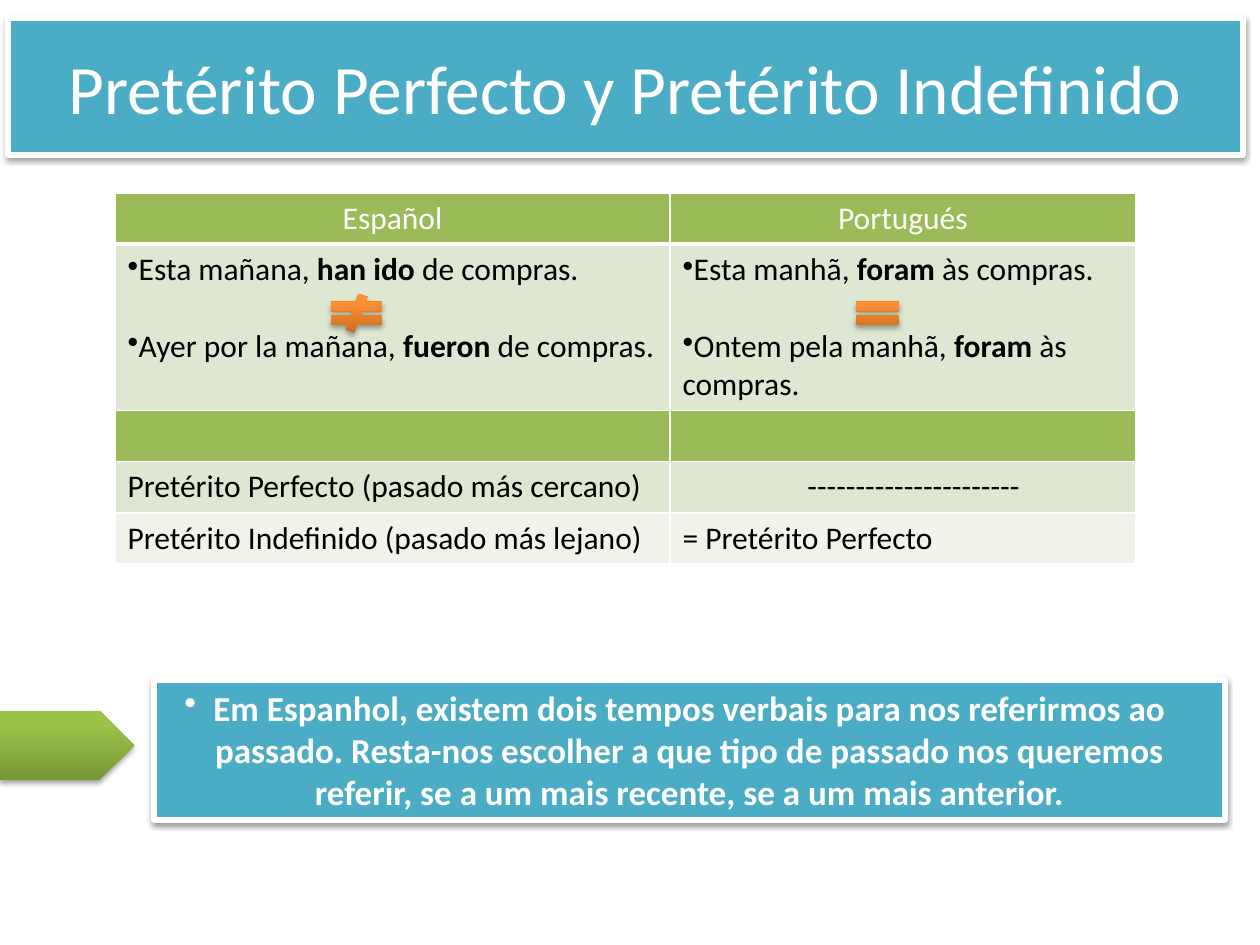
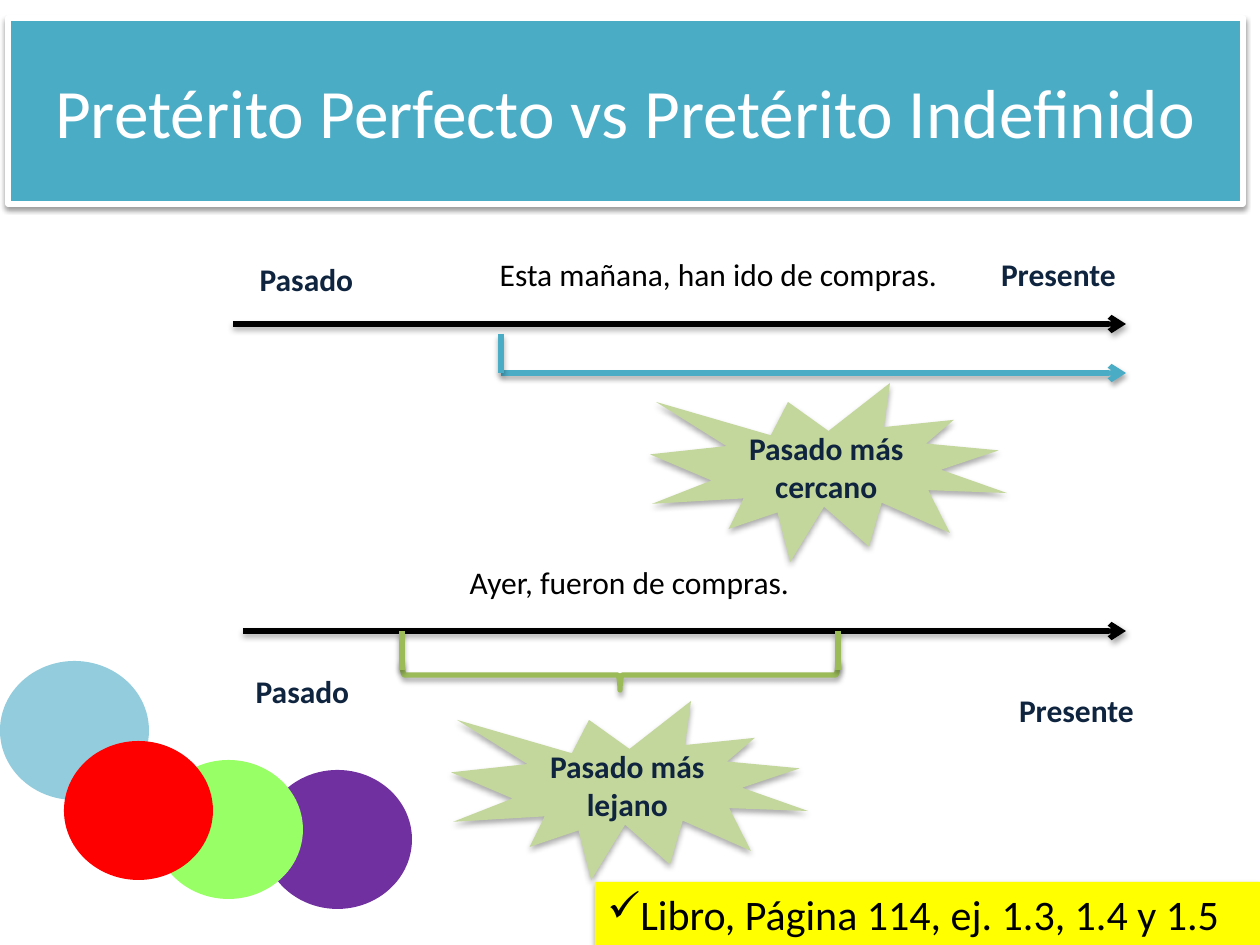
import pptx
import pptx.dml.color
import pptx.enum.shapes
import pptx.enum.text
import pptx.oxml
import pptx.oxml.ns
import pptx.util

SHAPES = pptx.enum.shapes.MSO_SHAPE
ALIGN = pptx.enum.text.PP_ALIGN
ANCHOR = pptx.enum.text.MSO_ANCHOR
SCALE = 914400 / 126
FONT = "Calibri"
WHITE, BLACK, NAVY = "FFFFFF", "000000", "0F243E"
TEAL, GREEN, PALE_GREEN, SEAL_GREEN = "4BACC6", "9BBB59", "DEE7D1", "C3D69B"
ORANGE_BLEND = ("CC6E20", "FF9034")
GREEN_BLEND = ("779737", "9BC348")
BANNER_SHADOW, SOFT_SHADOW, SEAL_SHADOW = (38, 3.1, 1.6), (35, 3.1, 1.8), (32, 3.5, 2.2)


def px(length):
    return pptx.util.Emu(round(length * SCALE))


def colour(value):
    return pptx.dml.color.RGBColor.from_string(value)


def add_xml(parent, tag, **attributes):
    element = pptx.oxml.parse_xml(f"<a:{tag} {pptx.oxml.ns.nsdecls('a')}/>")
    for name, value in attributes.items():
        element.set(name, str(value))
    parent.append(element)
    return element


class Deck:
    """Builds slides that share one style of banners, labels, arrows and tables."""

    def __init__(self):
        self.presentation = pptx.Presentation()
        self.presentation.slide_width = px(1260)
        self.presentation.slide_height = px(945)
        self.slide = None

    def add_slide(self):
        self.slide = self.presentation.slides.add_slide(self.presentation.slide_layouts[6])

    def shadow(self, effects, strength):
        alpha, blur, distance = strength
        outer = add_xml(effects, "outerShdw", blurRad=pptx.util.Pt(blur),
                        dist=pptx.util.Pt(distance), dir=5400000, rotWithShape=0)
        shade = add_xml(outer, "srgbClr", val=BLACK)
        add_xml(shade, "alpha", val=alpha * 1000)

    def shape(self, kind, left, top, width, height, fill=None, line=None, shadow=None):
        shape = self.slide.shapes.add_shape(kind, px(left), px(top), px(width), px(height))
        shape.shadow.inherit = False
        if shadow:
            self.shadow(shape._element.spPr.find(pptx.oxml.ns.qn("a:effectLst")), shadow)
        if fill is None:
            shape.fill.background()
        elif isinstance(fill, tuple):
            shape.fill.gradient()
            shape.fill.gradient_angle = 90
            for stop, tone, position in zip(shape.fill.gradient_stops, fill, (0, 0.8)):
                stop.color.rgb = colour(tone)
                stop.position = position
        else:
            shape.fill.solid()
            shape.fill.fore_color.rgb = colour(fill)
        if line:
            shape.line.color.rgb = colour(line)
            shape.line.width = pptx.util.Pt(3)
        else:
            shape.line.fill.background()
        return shape

    def paragraph(self, paragraph, runs, size=18, ink=BLACK, align=ALIGN.LEFT,
                  bullet=None, margins=(0, 0, 0)):
        paragraph.alignment = align
        properties = paragraph._p.get_or_add_pPr()
        for name, length in zip(("marL", "marR", "indent"), margins):
            properties.set(name, str(px(length)))
        if bullet:
            add_xml(properties, "buChar", char=bullet)
        for words, bold in runs:
            run = paragraph.add_run()
            run.text = words
            run.font.name = FONT
            run.font.size = pptx.util.Pt(size)
            run.font.bold = bold
            run.font.color.rgb = colour(ink)

    def set_text(self, shape, words, bold=False, anchor=ANCHOR.MIDDLE, **style):
        frame = shape.text_frame
        frame.word_wrap = True
        frame.vertical_anchor = anchor
        self.paragraph(frame.paragraphs[0], [(words, bold)], **style)

    def banner(self, left, top, width, height):
        return self.shape(SHAPES.RECTANGLE, left, top, width, height, TEAL, WHITE, BANNER_SHADOW)

    def title(self, words, height):
        self.set_text(self.banner(8, 18, 1235, height), words, size=39.6, ink=WHITE,
                      align=ALIGN.CENTER)

    def label(self, words, left, top, width, bold=True):
        box = self.shape(SHAPES.ROUNDED_RECTANGLE, left, top, width, 79)
        self.set_text(box, words, bold, ink=NAVY if bold else BLACK, align=ALIGN.CENTER)

    def seal(self, words, left, top):
        burst = self.shape(SHAPES.EXPLOSION1, left, top, 357, 179, SEAL_GREEN,
                           shadow=SEAL_SHADOW)
        self.set_text(burst, words, True, ink=NAVY, align=ALIGN.CENTER)

    def line(self, start, end, tone, arrow=False):
        connector = self.slide.shapes.add_connector(
            pptx.enum.shapes.MSO_CONNECTOR.STRAIGHT, *map(px, start + end))
        connector.line.color.rgb = colour(tone)
        connector.line.width = pptx.util.Pt(3)
        properties = connector._element.spPr
        if arrow:
            add_xml(properties.find(pptx.oxml.ns.qn("a:ln")), "tailEnd", type="arrow")
        self.shadow(add_xml(properties, "effectLst"), SOFT_SHADOW)

    def table(self, left, top, widths, heights, fills):
        frame = self.slide.shapes.add_table(len(heights), len(widths), px(left), px(top),
                                            px(sum(widths)), px(sum(heights)))
        table = frame.table
        for column, width in zip(table.columns, widths):
            column.width = px(width)
        for index, (row, height, fill) in enumerate(zip(table.rows, heights, fills)):
            row.height = px(height)
            for cell in row.cells:
                properties = cell._tc.get_or_add_tcPr()
                for side in ("lnL", "lnR", "lnT", "lnB"):
                    points = 3 if index == 0 and side == "lnB" else 1
                    border = add_xml(properties, side, w=pptx.util.Pt(points))
                    add_xml(add_xml(border, "solidFill"), "srgbClr", val=WHITE)
                cell.fill.solid()
                cell.fill.fore_color.rgb = colour(fill)
        return table


def build_comparison(deck):
    deck.add_slide()
    table = deck.table(115, 193, (555, 466), (51, 166, 51, 51, 51),
                       (GREEN, PALE_GREEN, GREEN, PALE_GREEN, "EFF3EA"))
    for column, language in enumerate(("Español", "Portugués")):
        deck.paragraph(table.cell(0, column).text_frame.paragraphs[0], [(language, False)],
                       ink=WHITE, align=ALIGN.CENTER)
    examples = (
        (("Esta mañana, ", "han ido ", "de compras."),
         ("Ayer por la mañana, ", "fueron ", "de compras.")),
        (("Esta manhã, ", "foram ", "às compras."),
         ("Ontem pela manhã, ", "foram ", "às compras.")),
    )
    for column, (recent, distant) in enumerate(examples):
        frame = table.cell(1, column).text_frame
        later = frame.add_paragraph()
        later.space_before = pptx.util.Pt(22)
        for paragraph, words in zip((frame.paragraphs[0], later), (recent, distant)):
            deck.paragraph(paragraph, zip(words, (False, True, False)), bullet="•")
    tenses = (
        (3, 0, "Pretérito Perfecto (pasado más cercano)", {}),
        (3, 1, "-" * 22, {"align": ALIGN.CENTER, "margins": (21, 0, 0)}),
        (4, 0, "Pretérito Indefinido (pasado más lejano)", {}),
        (4, 1, "= Pretérito Perfecto", {}),
    )
    for row, column, words, style in tenses:
        deck.paragraph(table.cell(row, column).text_frame.paragraphs[0], [(words, False)], **style)

    deck.title("Pretérito Perfecto y Pretérito Indefinido", 137)
    deck.set_text(deck.banner(154, 680, 1071, 140),
                  "Em Espanhol, existem dois tempos verbais para nos referirmos ao passado. "
                  "Resta-nos escolher a que tipo de passado nos queremos referir, "
                  "se a um mais recente, se a um mais anterior.",
                  True, ANCHOR.TOP, size=20, ink=WHITE, align=ALIGN.CENTER, bullet="•",
                  margins=(29, 29, -29))
    for kind, left, top, width, height, blend in (
            (SHAPES.MATH_NOT_EQUAL, 322, 294, 69, 39, ORANGE_BLEND),
            (SHAPES.MATH_EQUAL, 848, 294, 59, 39, ORANGE_BLEND),
            (SHAPES.PENTAGON, 0, 711, 134, 69, GREEN_BLEND)):
        deck.shape(kind, left, top, width, height, blend, shadow=SOFT_SHADOW)


def build_timelines(deck):
    deck.add_slide()
    present = 1126
    deck.line((233, 324), (present, 324), BLACK, arrow=True)
    deck.line((243, 631), (present, 631), BLACK, arrow=True)
    deck.label("Presente", 969, 234, 179)
    deck.label("Esta mañana, han ido de compras.", 461, 234, 515, bold=False)
    deck.label("Presente", 997, 670, 159)
    deck.label("Ayer, fueron de compras.", 372, 542, 515, bold=False)
    deck.label("Pasado", 217, 239, 179)
    deck.label("Pasado", 213, 651, 179)

    brace = deck.shape(SHAPES.RIGHT_BRACE, 605, 457, 30, 436, line=GREEN, shadow=SOFT_SHADOW)
    brace.rotation = 90
    deck.line((501, 373), (present, 373), TEAL, arrow=True)
    deck.line((501, 334), (501, 373), TEAL)
    for edge in (402, 838):
        deck.line((edge, 631), (edge, 670), GREEN)

    deck.title("Pretérito Perfecto vs Pretérito Indefinido", 186)
    for left, top, tone in ((0, 661, "93CDDD"), (263, 770, "7030A0"),
                            (154, 760, "99FF66"), (64, 741, "FF0000")):
        deck.shape(SHAPES.FLOWCHART_CONNECTOR, left, top, 149, 139, tone)
    deck.seal("Pasado más cercano", 650, 383)
    deck.seal("Pasado más lejano", 451, 701)
    exercise = deck.shape(SHAPES.RECTANGLE, 595, 882, 665, 63, "FFFF00", shadow=SOFT_SHADOW)
    deck.set_text(exercise, "Libro, Página 114, ej. 1.3, 1.4 y 1.5", anchor=ANCHOR.TOP,
                  size=24, bullet="✓")


def main():
    deck = Deck()
    build_comparison(deck)
    build_timelines(deck)
    deck.presentation.save("out.pptx")


if __name__ == "__main__":
    main()
